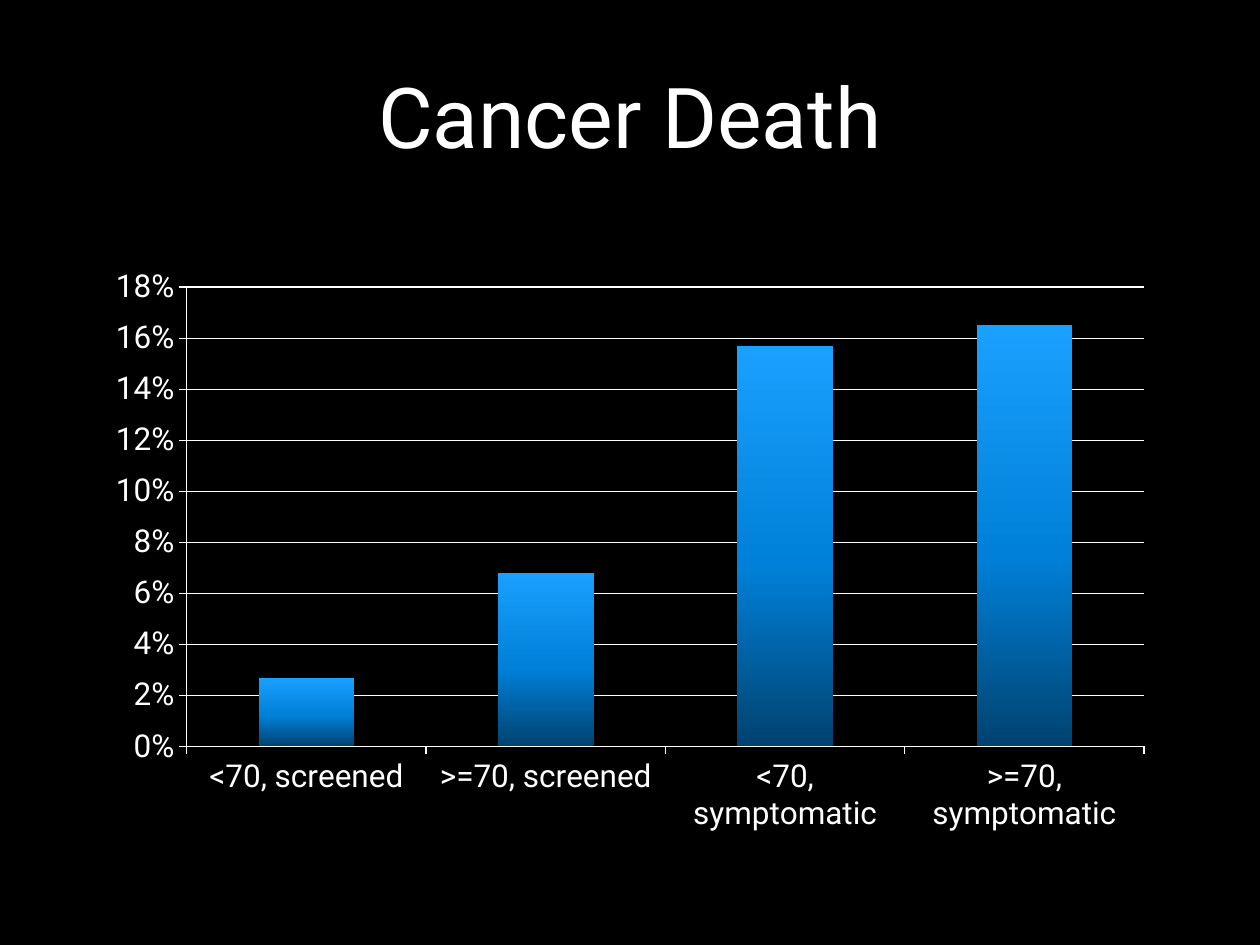
from copy import deepcopy

from pptx import Presentation
from pptx.chart.data import CategoryChartData
from pptx.dml.color import RGBColor
from pptx.enum.chart import XL_CHART_TYPE, XL_TICK_MARK
from pptx.enum.text import MSO_ANCHOR, PP_ALIGN
from pptx.util import Pt

BLACK = RGBColor(0x00, 0x00, 0x00)
WHITE = RGBColor(0xFF, 0xFF, 0xFF)
DARK_BLUE = RGBColor(0x00, 0x42, 0x6F)
MID_BLUE = RGBColor(0x00, 0x80, 0xD8)
LIGHT_BLUE = RGBColor(0x1A, 0xA0, 0xFF)
FONT = "Roboto"

presentation = Presentation()
presentation.slide_width, presentation.slide_height = Pt(720), Pt(540)
slide = presentation.slides.add_slide(presentation.slide_layouts[5])
slide.background.fill.solid()
slide.background.fill.fore_color.rgb = BLACK

# Title
title = slide.shapes.title
title.left, title.top, title.width, title.height = Pt(54), Pt(9.4), Pt(612), Pt(112.3)
title.text_frame.text = "Cancer Death"
title.text_frame.vertical_anchor = MSO_ANCHOR.MIDDLE
paragraph = title.text_frame.paragraphs[0]
paragraph.alignment = PP_ALIGN.CENTER
paragraph.font.size = Pt(48)
paragraph.font.name = FONT
paragraph.font.color.rgb = WHITE

# Column chart of death rates
chart_data = CategoryChartData(number_format="0%")
chart_data.categories = [
    "<70, screened", ">=70, screened", "<70, symptomatic", ">=70, symptomatic",
]
chart_data.add_series("Series 1", (0.027, 0.068, 0.157, 0.165))
chart = slide.shapes.add_chart(
    XL_CHART_TYPE.COLUMN_CLUSTERED, Pt(54), Pt(146.9), Pt(612), Pt(335.5), chart_data
).chart
chart.has_legend = False
chart.has_title = False
chart.font.size = Pt(18)
chart.font.name = FONT
chart.font.color.rgb = WHITE

# Axes and gridlines
value_axis = chart.value_axis
value_axis.minimum_scale, value_axis.maximum_scale = 0, 0.18
value_axis.major_unit = 0.02
value_axis.has_major_gridlines = True
value_axis.tick_labels.number_format = "0%"
value_axis.tick_labels.number_format_is_linked = False
for axis in (chart.category_axis, value_axis):
    axis.major_tick_mark = XL_TICK_MARK.OUTSIDE
    axis.minor_tick_mark = XL_TICK_MARK.NONE
for part in (chart.category_axis, value_axis, value_axis.major_gridlines):
    part.format.line.color.rgb = WHITE
    part.format.line.width = Pt(0.75)

# Columns shade from dark at the foot to light at the top
plot = chart.plots[0]
plot.gap_width = 150
plot.vary_by_categories = False
fill = plot.series[0].format.fill
fill.gradient()
fill.gradient_angle = 90
stop_list = fill.gradient_stops[0]._gs.getparent()
stop_list.insert(1, deepcopy(stop_list[0]))
stops = ((0, DARK_BLUE), (0.45, MID_BLUE), (1, LIGHT_BLUE))
for stop, (position, color) in zip(fill.gradient_stops, stops):
    stop.position = position
    stop.color.rgb = color

presentation.save("out.pptx")
